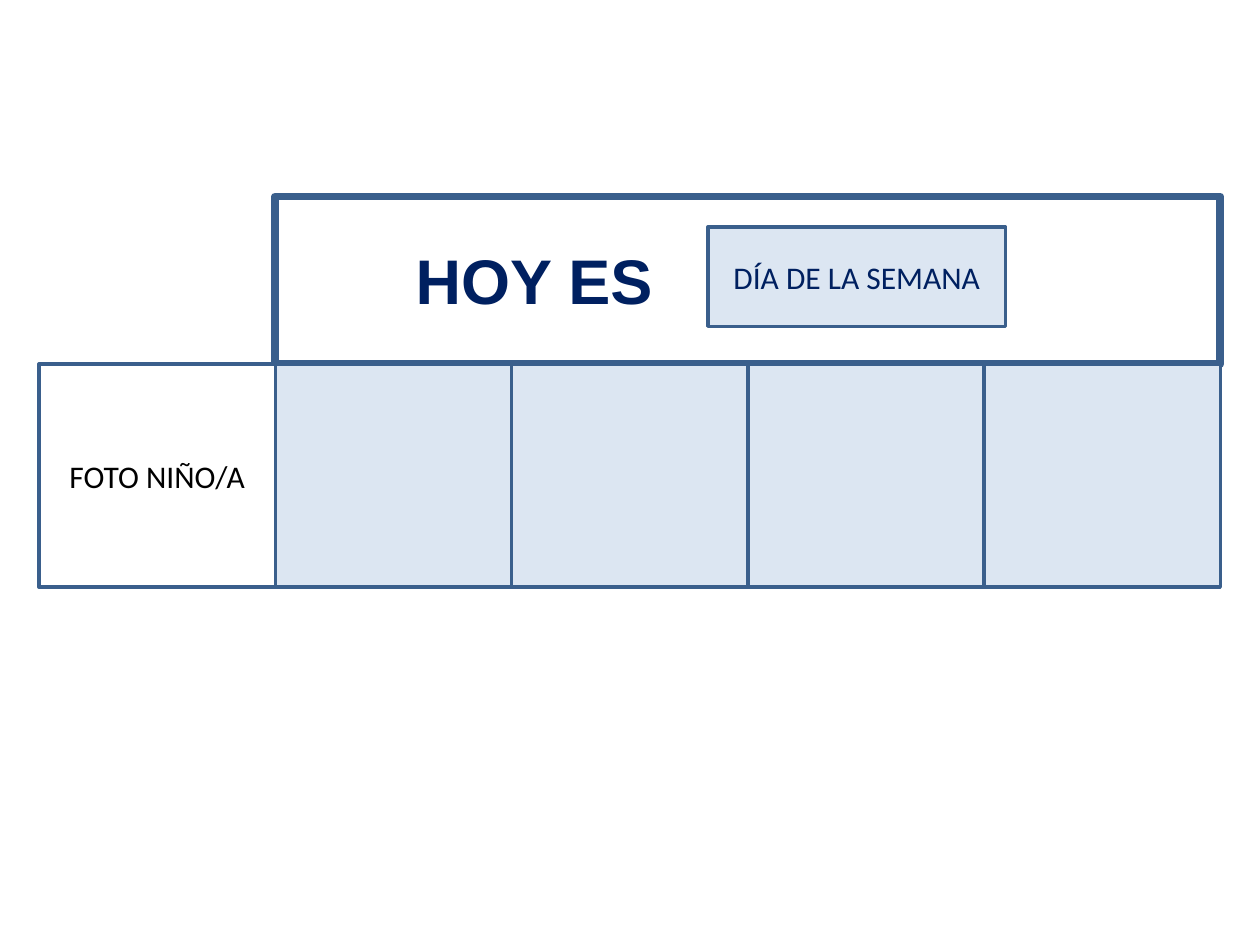
from pptx import Presentation
from pptx.dml.color import RGBColor
from pptx.enum.shapes import MSO_SHAPE as Shape
from pptx.enum.text import MSO_ANCHOR as Anchor, PP_ALIGN as Align
from pptx.util import Inches, Pt

COLORS = {
    "white": "FFFFFF",
    "pale": "DCE6F2",
    "border": "3A5F8C",
    "navy": "002060",
    "black": "000000",
}


def add_box(left, top, width, height, fill, line_width=2):
    box = slide.shapes.add_shape(
        Shape.RECTANGLE, Inches(left), Inches(top), Inches(width), Inches(height)
    )
    box.shadow.inherit = False
    box.fill.solid()
    box.fill.fore_color.rgb = RGBColor.from_string(COLORS[fill])
    box.line.color.rgb = RGBColor.from_string(COLORS["border"])
    box.line.width = Pt(line_width)
    return box


def write(shape, text, color="navy", size=18, font="Calibri", bold=False,
          align=Align.CENTER, anchor=Anchor.MIDDLE):
    frame = shape.text_frame
    frame.word_wrap = True
    frame.vertical_anchor = anchor
    paragraph = frame.paragraphs[0]
    paragraph.alignment = align
    run = paragraph.add_run()
    run.text = text
    run.font.name = font
    run.font.size = Pt(size)
    run.font.bold = bold
    run.font.color.rgb = RGBColor.from_string(COLORS[color])


presentation = Presentation()
presentation.slide_width = Inches(10)
presentation.slide_height = Inches(7.5)
slide = presentation.slides.add_slide(presentation.slide_layouts[6])

# Header with the day of the week
cell_left, cell_top, cell_width, cell_height = 0.31, 2.89, 1.875, 1.77
add_box(cell_left + cell_width, 1.56, 4 * cell_width, 1.33, "white", line_width=4.5)

heading = slide.shapes.add_textbox(Inches(3.2), Inches(1.87), Inches(2.19), Inches(0.71))
write(heading, "HOY ES", size=36, font="Arial", bold=True,
      align=Align.LEFT, anchor=Anchor.TOP)

weekday = add_box(5.62, 1.8, 2.36, 0.79, "pale")
write(weekday, "DÍA DE LA SEMANA")

# Row of the child's photo and four empty cells
for column in range(5):
    cell = add_box(cell_left + column * cell_width, cell_top, cell_width, cell_height,
                   "pale" if column else "white")
    if column == 0:
        write(cell, "FOTO NIÑO/A", color="black")

presentation.save("out.pptx")
